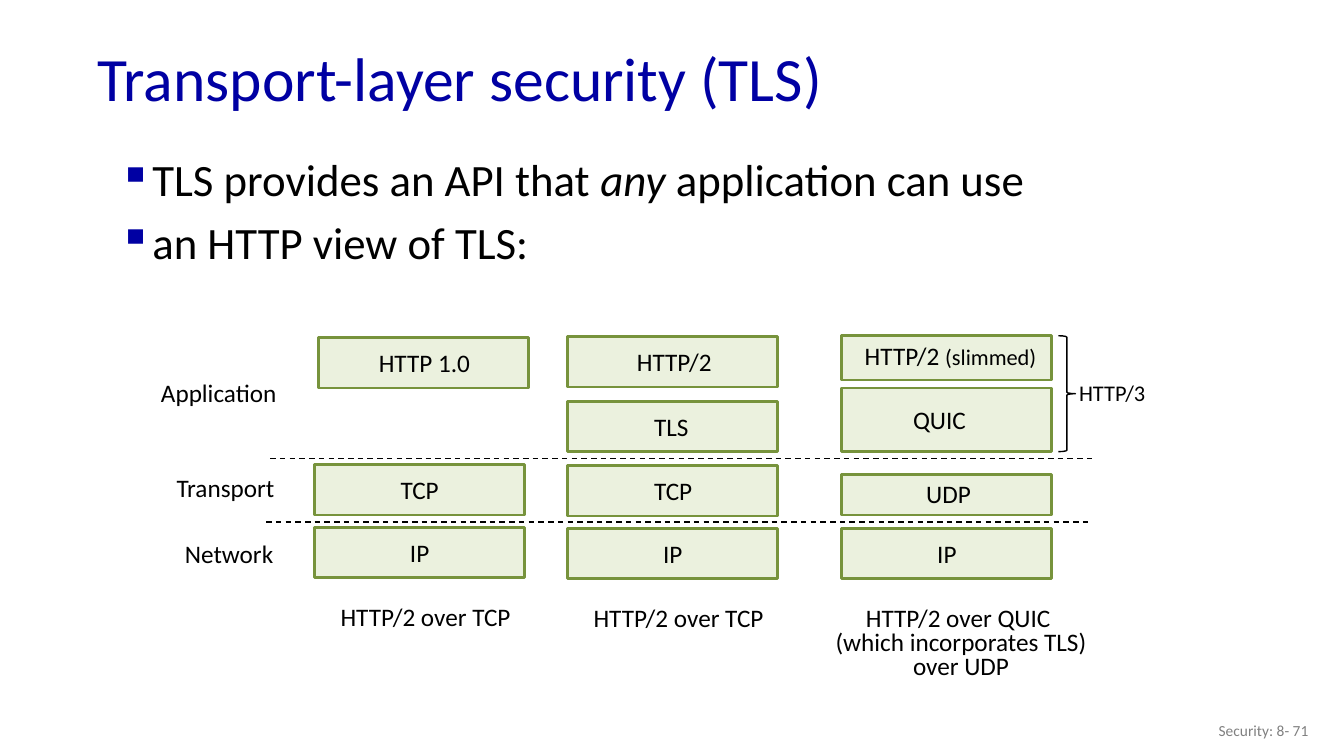
"""Build the slide on transport-layer security and its protocol stacks."""
from dataclasses import dataclass

import pptx
import pptx.dml.color
import pptx.enum.dml
import pptx.enum.shapes
import pptx.enum.text
import pptx.oxml.ns
import pptx.util
from lxml import etree

Pt = pptx.util.Pt
Align = pptx.enum.text.PP_ALIGN
Anchor = pptx.enum.text.MSO_ANCHOR
Shape = pptx.enum.shapes.MSO_SHAPE
BLUE, BLACK, GRAY = "0000A3", "000000", "808080"
PALE, GREEN = "EBF1DE", "77933C"


@dataclass
class Run:
    text: str
    size: float = 18
    color: str = BLACK
    slant: bool = False


@dataclass
class Label:
    left: float
    top: float
    width: float
    height: float
    lines: list[list[Run]]
    align: Align = Align.LEFT
    anchor: Anchor = Anchor.TOP
    wrap: bool = True
    grow: bool = True
    pitch: float = 1
    before: float = 0
    bullet: str = ""


@dataclass
class Layer:
    left: float
    top: float
    height: float
    runs: list[Run]
    inset: float
    width: float
    drop: float = 3.6


def paint(color: str) -> pptx.dml.color.RGBColor:
    return pptx.dml.color.RGBColor.from_string(color)


def add_bullet(para, mark: str) -> None:
    props = para._p.get_or_add_pPr()
    props.set("marL", str(Pt(22.5)))
    props.set("indent", str(Pt(-22.5)))
    tint = etree.SubElement(props, pptx.oxml.ns.qn("a:buClr"))
    etree.SubElement(tint, pptx.oxml.ns.qn("a:srgbClr"), val=BLUE)
    etree.SubElement(props, pptx.oxml.ns.qn("a:buChar"), char=mark)


def add_label(slide, label: Label) -> None:
    box = slide.shapes.add_textbox(Pt(label.left), Pt(label.top), Pt(label.width), Pt(label.height))
    frame = box.text_frame
    frame.word_wrap = label.wrap
    frame.vertical_anchor = label.anchor
    if label.grow:
        frame.auto_size = pptx.enum.text.MSO_AUTO_SIZE.SHAPE_TO_FIT_TEXT
    for at, line in enumerate(label.lines):
        para = frame.add_paragraph() if at else frame.paragraphs[0]
        para.alignment = label.align
        para.line_spacing = label.pitch
        para.space_before = Pt(label.before)
        if label.bullet:
            add_bullet(para, label.bullet)
        for item in line:
            run = para.add_run()
            run.text = item.text
            run.font.name = "Calibri"
            run.font.size = Pt(item.size)
            run.font.italic = item.slant
            run.font.color.rgb = paint(item.color)


def add_layer(slide, layer: Layer) -> None:
    box = slide.shapes.add_shape(
        Shape.RECTANGLE, Pt(layer.left), Pt(layer.top), Pt(150), Pt(layer.height))
    box.shadow.inherit = False
    box.fill.solid()
    box.fill.fore_color.rgb = paint(PALE)
    box.line.color.rgb = paint(GREEN)
    box.line.width = Pt(2)
    add_label(slide, Label(layer.left + layer.inset, layer.top + layer.drop,
                           layer.width, 28.8, [layer.runs], wrap=False))


def add_border(slide, left: float, top: float) -> None:
    line = slide.shapes.add_connector(
        pptx.enum.shapes.MSO_CONNECTOR.STRAIGHT, Pt(left), Pt(top), Pt(left + 587.5), Pt(top))
    line.line.color.rgb = paint(BLACK)
    line.line.width = Pt(1)
    line.line.dash_style = pptx.enum.dml.MSO_LINE.DASH
    etree.SubElement(line._element.spPr, pptx.oxml.ns.qn("a:effectLst"))


def add_brace(slide) -> None:
    brace = slide.shapes.add_shape(Shape.RIGHT_BRACE, Pt(756), Pt(239.8), Pt(12.2), Pt(82.8))
    brace.shadow.inherit = False
    brace.fill.background()
    brace.line.color.rgb = paint(BLACK)
    brace.line.width = Pt(1)


LEFT, MID, RIGHT = 224.6, 405.4, 601.2
LAYERS = [
    Layer(LEFT + 2.9, 241.2, 36, [Run("HTTP 1.0")], 36, 80),
    Layer(LEFT, 331.9, 36, [Run("TCP")], 54.4, 42.5),
    Layer(LEFT, 376.6, 36, [Run("IP")], 61.2, 28.8),
    Layer(MID, 240.5, 36, [Run("HTTP/2")], 42.5, 69.1),
    Layer(MID, 286.6, 36, [Run("TLS")], 54.7, 39.6),
    Layer(MID, 332.6, 36, [Run("TCP")], 54.7, 42.5),
    Layer(MID, 377.3, 36, [Run("IP")], 61.2, 28.8),
    Layer(RIGHT, 239.8, 31.7, [Run("HTTP/2 "), Run("(slimmed)", 16)], 9.4, 139, 0),
    Layer(RIGHT, 277.2, 45.4, [Run("QUIC")], 43.9, 52.6, 7.9),
    Layer(RIGHT, 339.1, 28.8, [Run("UDP")], 53.3, 46.8, -0.7),
    Layer(RIGHT, 377.3, 36, [Run("IP")], 61.2, 28.8),
]
LABELS = [
    Label(62.6, 23, 828, 70.6, [[Run("Transport-layer security (TLS)", 44, BLUE)]],
          anchor=Anchor.MIDDLE, grow=False, pitch=0.9),
    Label(77.8, 109.4, 856.8, 128.2,
          [[Run("TLS provides an API that ", 32), Run("any", 32, slant=True),
            Run(" application can use", 32)],
           [Run("an HTTP view of TLS:", 32)]],
          grow=False, pitch=0.9, before=10, bullet="▪"),
    Label(95.8, 265.7, 108.7, 28.8, [[Run("Application")]], Align.RIGHT),
    Label(106.6, 334.1, 96.5, 28.8, [[Run("Transport")]], Align.RIGHT),
    Label(105.8, 380.9, 96.5, 28.8, [[Run("Network")]], Align.RIGHT),
    Label(754.6, 267.1, 70.6, 26.6, [[Run("HTTP/3", 16)]], Align.RIGHT),
    Label(236.2, 426.2, 139, 28.8, [[Run("HTTP/2 over TCP")]], wrap=False),
    Label(416.9, 427, 139, 28.8, [[Run("HTTP/2 over TCP")]], wrap=False),
    Label(588.2, 430.6, 196.6, 59.8,
          [[Run("HTTP/2 over QUIC ")], [Run("(which incorporates TLS)")], [Run("over UDP")]],
          Align.CENTER, wrap=False, pitch=0.8),
    Label(725.8, 507.6, 216, 28.8, [[Run("Security: 8- 71", 11, GRAY)]],
          Align.RIGHT, Anchor.MIDDLE, grow=False),
]


def main() -> None:
    deck = pptx.Presentation()
    deck.slide_width, deck.slide_height = Pt(960), Pt(540)
    slide = deck.slides.add_slide(deck.slide_layouts[6])
    for layer in LAYERS:
        add_layer(slide, layer)
    add_border(slide, 193, 327.6)
    add_border(slide, 190.1, 373)
    add_brace(slide)
    for label in LABELS:
        add_label(slide, label)
    deck.save("out.pptx")


if __name__ == "__main__":
    main()
